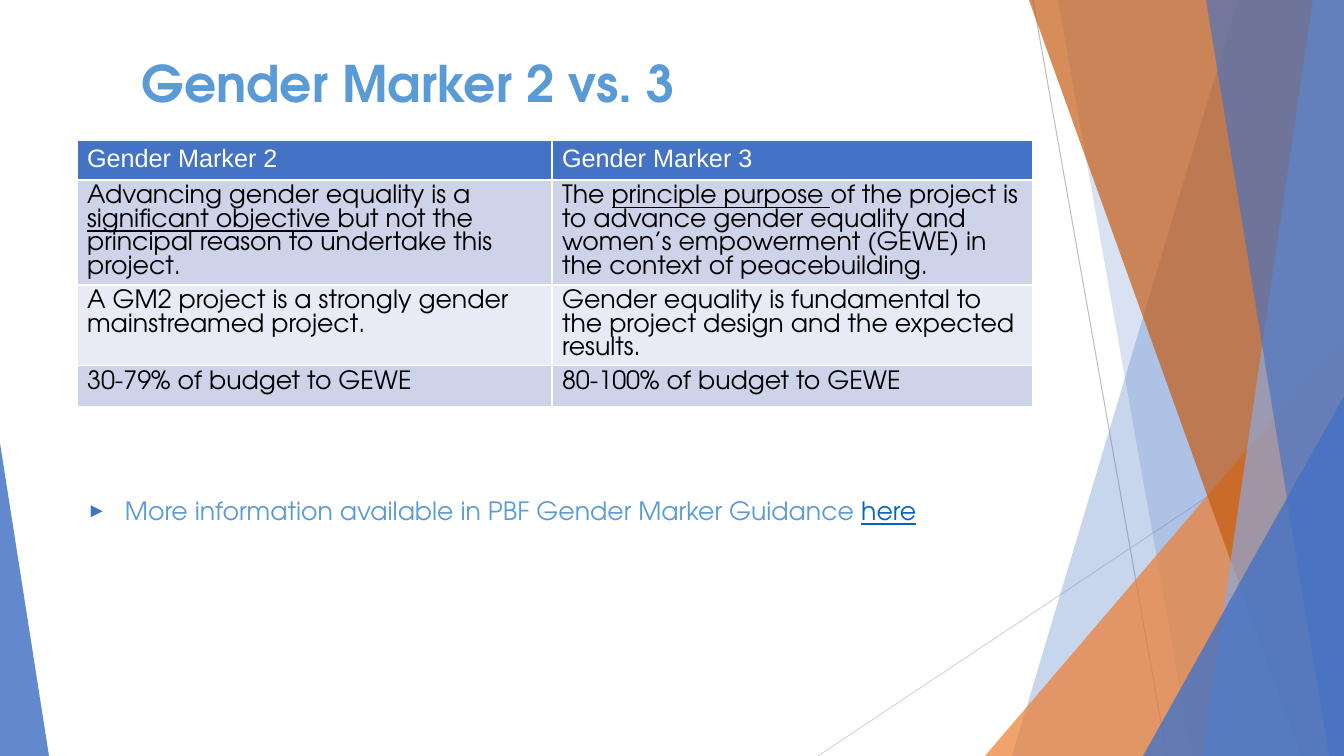
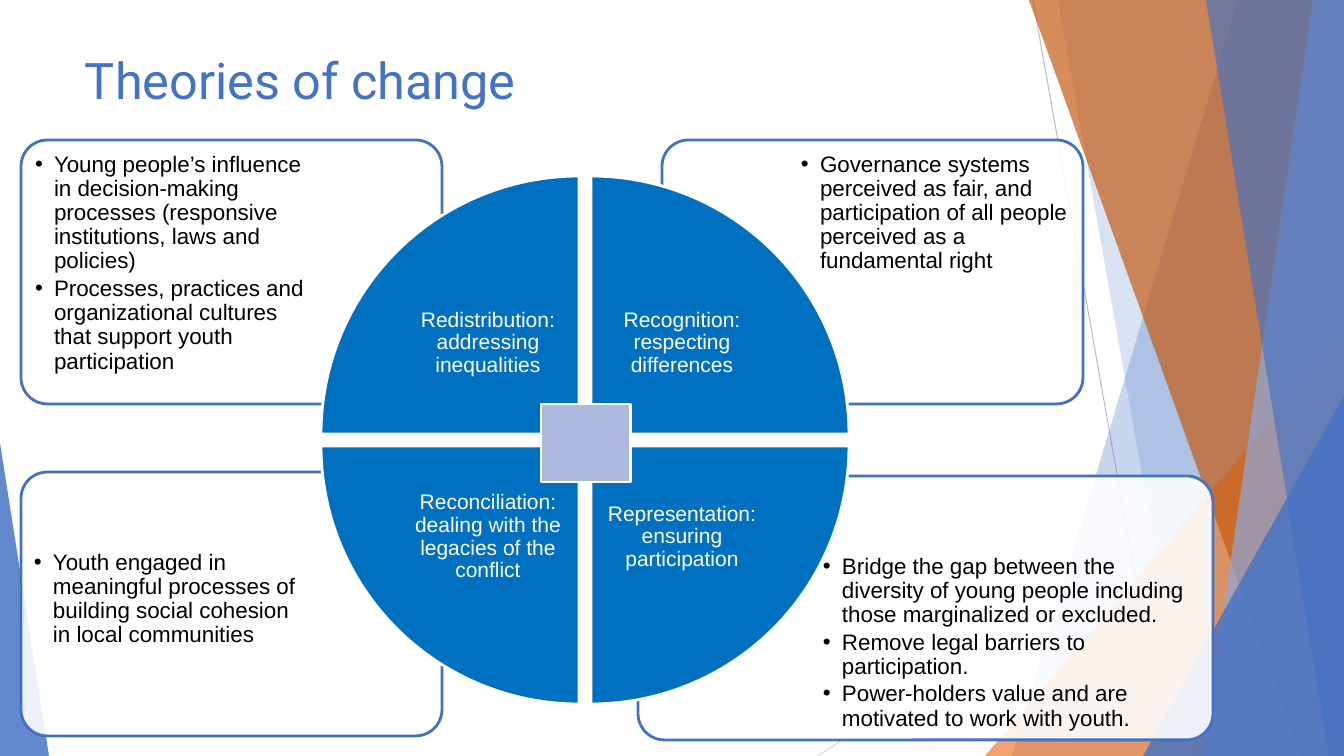
"""Build two slides on gender markers and theories of change."""
from lxml.etree import SubElement as Sub
from pptx import Presentation
from pptx.dml.color import RGBColor
from pptx.enum.shapes import MSO_CONNECTOR as Conn, MSO_SHAPE as Form
from pptx.enum.text import MSO_ANCHOR as Anchor, PP_ALIGN as Align
from pptx.oxml.ns import qn
from pptx.util import Emu, Pt

PX = 914400 / 100.8
WIDE, HIGH = 1344, 756
BLUE, SKY, ROYAL, EDGE = "4472C4", "5B9BD5", "0070C0", "4372C3"
BLACK, WHITE = "000000", "FFFFFF"
GEO = "TeX Gyre Adventor"
HEAD = dict(name=GEO, size=Pt(36), bold=True)
LIGHT = dict(name="Roboto", size=Pt(36), bold=False)
BODY = dict(name=GEO, size=Pt(18), bold=False)
LABEL = dict(BODY, name="Arial")
NOTE = dict(name="Arial", size=Pt(16))
WEDGE = dict(name="Arial", size=Pt(15))
TIGHT = dict(line_spacing=0.9)
MID = dict(TIGHT, alignment=Align.CENTER)


def px(num):
    return Emu(round(num * PX))


def hue(code):
    return RGBColor.from_string(code)


def dress(item, vals):
    for key, val in vals.items():
        setattr(item, key, val)


class Deck:
    def __init__(self):
        self.pres = Presentation()
        dress(self.pres, dict(slide_width=px(WIDE), slide_height=px(HIGH)))

    def page(self):
        self.shapes = self.pres.slides.add_slide(self.pres.slide_layouts[6]).shapes
        self.line((1033, 0), (1167, HIGH), "BFBFBF")
        self.line((WIDE, 406), (818, HIGH), "D8D8D8")
        self.band(1238, 1012, BLUE, 29)
        self.band(1058, 1192, BLUE, 20)
        self.peak((985, 336, 359, 420), 1, "ED7D31", 71)
        self.band(1029, 1301, "C55A11", 69)
        self.band(1313, 1202, "8DA9DB", 69)
        self.band(1206, 1329, BLUE, 64)
        self.peak((1143, 396, 201, 360), 1, BLUE, 80)
        self.peak((0, 443, 49, 313), 0, BLUE, 84)

    def line(self, start, end, tint):
        link = self.shapes.add_connector(Conn.STRAIGHT, *map(px, start + end))
        link.line.color.rgb = hue(tint)
        link.line.width = Pt(0.75)
        Sub(link._element.spPr, qn("a:effectLst"))

    def paint(self, shape, fill, alpha=100, edge=None):
        shape.shadow.inherit = False
        shape.fill.solid()
        shape.fill.fore_color.rgb = hue(fill)
        if alpha < 100:
            tone = shape._element.spPr.find(qn("a:solidFill"))[0]
            Sub(tone, qn("a:alpha"), val=str(alpha * 1000))
        if edge:
            shape.line.color.rgb = hue(edge)
            shape.line.width = Pt(2)
        else:
            shape.line.fill.background()

    def band(self, top, foot, fill, alpha):
        pen = self.shapes.build_freeform(top, 0, scale=PX)
        pen.add_line_segments([(WIDE, 0), (WIDE, HIGH), (foot, HIGH)], close=True)
        self.paint(pen.convert_to_shape(), fill, alpha)

    def form(self, kind, box, fill, alpha=100, edge=None):
        shape = self.shapes.add_shape(kind, *map(px, box))
        self.paint(shape, fill, alpha, edge)
        return shape

    def peak(self, box, tip, fill, alpha):
        self.form(Form.ISOSCELES_TRIANGLE, box, fill, alpha).adjustments[0] = tip

    def words(self, para, runs, font, tint):
        for text, *more in runs:
            run = para.add_run()
            run.text = text
            dress(run.font, font)
            run.font.color.rgb = hue(more[0] if more else tint)
            if more:
                run.font.underline = True

    def bullet(self, para, sign, tint, dent, size):
        props = para._p.get_or_add_pPr()
        props.set("marL", str(px(dent)))
        props.set("indent", str(-px(dent)))
        Sub(Sub(props, qn("a:buClr")), qn("a:srgbClr"), val=tint)
        Sub(props, qn("a:buSzPct"), val=str(size * 1000))
        Sub(props, qn("a:buFont"), typeface="Arial")
        Sub(props, qn("a:buChar"), char=sign)

    def text(self, box, paras, font, tint, form=None, anchor=Anchor.TOP, pad=(10, 5), mark=None):
        frame = self.shapes.add_textbox(*map(px, box)).text_frame
        side, top = map(px, pad)
        dress(frame, dict(word_wrap=True, vertical_anchor=anchor, margin_left=side,
                          margin_right=side, margin_top=top, margin_bottom=top))
        for num, runs in enumerate(paras):
            para = frame.add_paragraph() if num else frame.paragraphs[0]
            dress(para, form or {})
            if num:
                para.space_before = Pt(2.4)
            if mark:
                self.bullet(para, *mark)
            self.words(para, runs, font, tint)

    def table(self, spot, cols, rows, cells):
        box = spot + (sum(cols), sum(rows))
        grid = self.shapes.add_table(len(rows), len(cols), *map(px, box)).table
        for col, size in zip(grid.columns, cols):
            col.width = px(size)
        for num, (row, size) in enumerate(zip(grid.rows, rows)):
            row.height = px(size)
            for cell, runs in zip(row.cells, cells[num]):
                cell.fill.solid()
                fill = ("CDD4EA" if num % 2 else "E8EBF5") if num else BLUE
                cell.fill.fore_color.rgb = hue(fill)
                self.words(cell.text_frame.paragraphs[0], runs,
                           BODY if num else LABEL, BLACK if num else WHITE)

    def card(self, box, spot, items):
        self.form(Form.ROUNDED_RECTANGLE, box, WHITE, 89, EDGE).adjustments[0] = 0.1
        self.text(spot, [[(item,)] for item in items], NOTE, BLACK, TIGHT,
                  pad=(7, 7), mark=("•", BLACK, 19, 100))

    def wheel(self, left, top, size, gap, names):
        step, inner = size + gap, 182
        places = [(0, 0), (1, 0), (1, 1), (0, 1)]
        for turn, ((col, row), name) in enumerate(zip(places, names)):
            x, y = left + col * step, top + row * step
            self.form(Form.PIE_WEDGE, (x, y, size, size), ROYAL, edge=WHITE).rotation = turn * 90
            inset = size - inner
            self.text((x + inset * (1 - col), y + inset * (1 - row), inner, inner),
                      [[(name,)]], WEDGE, WHITE, MID, Anchor.MIDDLE, (12, 12))


def main():
    deck = Deck()
    deck.page()
    deck.table((77, 140), (475, 481), (40, 105, 80, 41), [
        [[("Gender Marker 2",)], [("Gender Marker 3",)]],
        [[("Advancing gender equality is a ",), ("significant objective ", BLACK),
          ("but not the principal reason to undertake this project.",)],
         [("The ",), ("principle purpose ", BLACK),
          ("of the project is to advance gender equality and women’s empowerment "
           "(GEWE) in the context of peacebuilding.",)]],
        [[("A GM2 project is a strongly gender mainstreamed project.",)],
         [("Gender equality is fundamental to the project design and the expected results.",)]],
        [[("30-79% of budget to GEWE",)], [("80-100% of budget to GEWE",)]],
    ])
    deck.text((77, 490, 1028, 100),
              [[("More information available in PBF Gender Marker Guidance ",), ("here", "0563C1")]],
              BODY, SKY, mark=("►", BLUE, 38, 80))
    deck.text((132, 42, 948, 81), [[("Gender Marker 2 vs. 3",)]], HEAD, SKY, anchor=Anchor.MIDDLE)

    deck.page()
    deck.text((75, 44, 948, 145), [[("Theories of change",)]], LIGHT, BLUE)
    deck.card((638, 476, 575, 264), (816, 548, 391, 186), [
        "Bridge the gap between the diversity of young people including those "
        "marginalized or excluded.",
        "Remove legal barriers to participation.",
        "Power-holders value and are motivated to work with youth."])
    deck.card((21, 472, 421, 264), (27, 544, 283, 186), [
        "Youth engaged in meaningful processes of building social cohesion in local communities"])
    deck.card((662, 140, 421, 264), (794, 146, 283, 186), [
        "Governance systems perceived as fair, and participation of all people "
        "perceived as a fundamental right"])
    deck.card((21, 140, 421, 264), (28, 146, 283, 186), [
        "Young people’s influence in decision-making processes "
        "(responsive institutions, laws and policies)",
        "Processes, practices and organizational cultures that support youth participation"])
    deck.wheel(321, 176, 258, 12, [
        "Redistribution: addressing inequalities",
        "Recognition: respecting differences",
        "Representation: ensuring participation",
        "Reconciliation: dealing with the legacies of the conflict"])
    deck.form(Form.RECTANGLE, (541, 404, 90, 78), "ABBADE", edge=WHITE)
    deck.pres.save("out.pptx")


if __name__ == "__main__":
    main()
